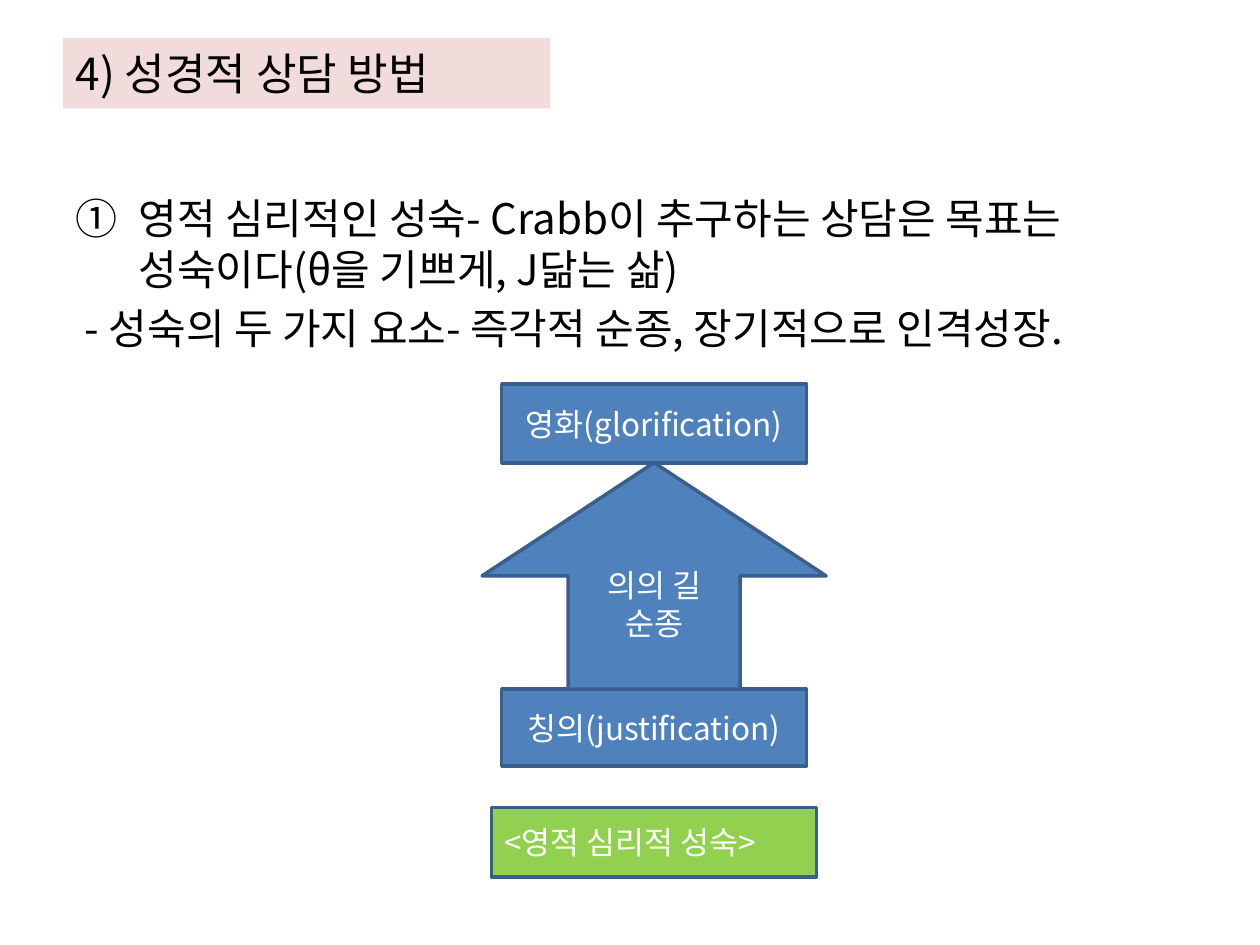
import pptx
import pptx.dml.color
import pptx.enum.shapes
import pptx.enum.text
import pptx.oxml.ns
import pptx.util

Pt = pptx.util.Pt
SHAPES = pptx.enum.shapes.MSO_SHAPE
ALIGN = pptx.enum.text.PP_ALIGN
ANCHOR = pptx.enum.text.MSO_ANCHOR
FONT = "Noto Sans CJK KR"

TITLE = "4) 성경적 상담 방법"
POINTS = [
    ("영적 심리적인 성숙- Crabb이 추구하는 상담은 목표는 성숙이다(θ을 기쁘게, J닮는 삶)", 36, "circleNumDbPlain"),
    (" - 성숙의 두 가지 요소- 즉각적 순종, 장기적으로 인격성장.", 27, None),
]
CENTER = 373.8
STAGES = [
    ("영화(glorification)", SHAPES.RECTANGLE, 219.6, 174.2, 45, "4F81BD", ALIGN.CENTER),
    ("칭의(justification)", SHAPES.RECTANGLE, 393.8, 174.2, 44, "4F81BD", ALIGN.CENTER),
    ("의의 길\n순종", SHAPES.UP_ARROW, 264.4, 196.6, 129.4, "4F81BD", ALIGN.CENTER),
    ("<영적 심리적 성숙>", SHAPES.RECTANGLE, 461.5, 185.8, 39.6, "92D050", ALIGN.LEFT),
]


def paint(target, color):
    target.solid()
    target.fore_color.rgb = pptx.dml.color.RGBColor.from_string(color)


def place(box, left, top, width, height):
    box.left, box.top, box.width, box.height = map(Pt, (left, top, width, height))


def write(box, text, size, color, align, anchor):
    frame = box.text_frame
    frame.text = text
    frame.word_wrap = True
    frame.auto_size = pptx.enum.text.MSO_AUTO_SIZE.NONE
    frame.vertical_anchor = anchor
    for para in frame.paragraphs:
        para.alignment = align
        for span in para.runs:
            span.font.size = Pt(size)
            span.font.name = FONT
            paint(span.font.fill, color)
            east_asian = span.font._element.makeelement(pptx.oxml.ns.qn("a:ea"), {"typeface": FONT})
            span.font._element.append(east_asian)


def set_bullet(para, indent, numbering):
    props = para._p.get_or_add_pPr()
    props.set("marL", str(Pt(indent)))
    props.set("indent", str(-Pt(indent)))
    tag, attributes = ("a:buAutoNum", {"type": numbering}) if numbering else ("a:buNone", {})
    props.append(props.makeelement(pptx.oxml.ns.qn(tag), attributes))


def main():
    deck = pptx.Presentation()
    deck.slide_width, deck.slide_height = Pt(720), Pt(540)
    page = deck.slides.add_slide(deck.slide_layouts[1])

    title = page.shapes.title
    place(title, 36, 21.6, 278.6, 40.3)
    paint(title.fill, "F2DCDB")
    write(title, TITLE, 25.2, "000000", ALIGN.LEFT, ANCHOR.MIDDLE)

    body = page.placeholders[1]
    place(body, 36, 106.6, 648, 375.8)
    write(body, "\n".join(text for text, _, _ in POINTS), 24, "000000", ALIGN.LEFT, ANCHOR.TOP)
    for para, (_, indent, numbering) in zip(body.text_frame.paragraphs, POINTS):
        set_bullet(para, indent, numbering)

    for text, kind, top, width, height, color, align in STAGES:
        box = page.shapes.add_shape(kind, *map(Pt, (CENTER - width / 2, top, width, height)))
        box.shadow.inherit = False
        paint(box.fill, color)
        paint(box.line.fill, "3A5F8C")
        box.line.width = Pt(2)
        write(box, text, 18, "FFFFFF", align, ANCHOR.MIDDLE)

    deck.save("out.pptx")


if __name__ == "__main__":
    main()
